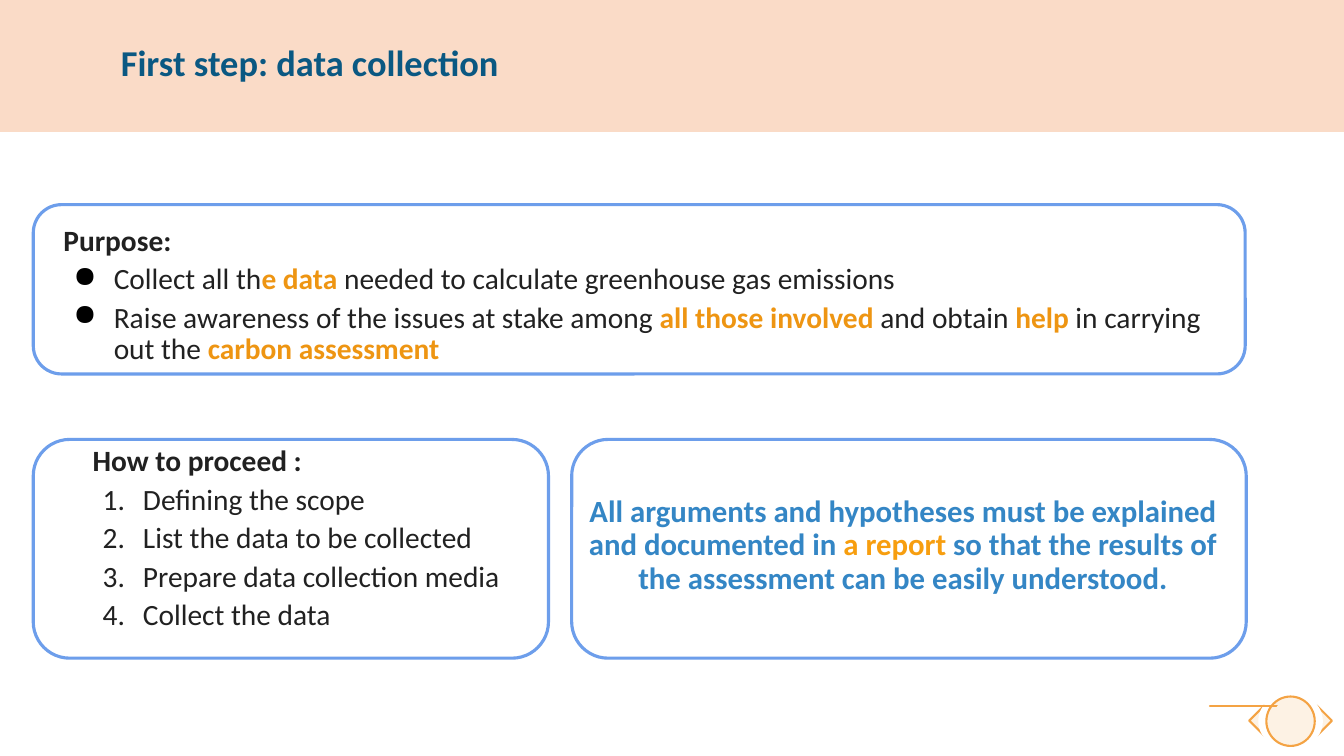
from math import cos, pi, sin

from lxml import etree
from pptx import Presentation
from pptx.dml.color import RGBColor
from pptx.enum.shapes import MSO_SHAPE
from pptx.enum.text import MSO_ANCHOR, PP_ALIGN
from pptx.oxml.ns import qn
from pptx.util import Inches, Pt

RECTANGLE = MSO_SHAPE.RECTANGLE
ROUNDED = MSO_SHAPE.ROUNDED_RECTANGLE
OVAL = MSO_SHAPE.OVAL
ARROW = MSO_SHAPE.STRIPED_RIGHT_ARROW
LEFT, CENTER = PP_ALIGN.LEFT, PP_ALIGN.CENTER
TOP, MIDDLE = MSO_ANCHOR.TOP, MSO_ANCHOR.MIDDLE

WHITE = RGBColor(0xFF, 0xFF, 0xFF)
BLACK = RGBColor(0x00, 0x00, 0x00)
INK = RGBColor(0x21, 0x21, 0x21)
NAVY = RGBColor(0x0A, 0x58, 0x82)
BLUE = RGBColor(0x34, 0x86, 0xC5)
FRAME = RGBColor(0x6D, 0x9E, 0xEB)
BANNER = RGBColor(0xED, 0x7D, 0x31)
ORANGE = RGBColor(0xF4, 0xA3, 0x44)
ACCENT = RGBColor(0xEE, 0x95, 0x12)
REPORT = RGBColor(0xF7, 0x9E, 0x0F)

HEADING = {"size": Pt(21), "name": "Calibri", "bold": True, "color": INK}
BODY = {**HEADING, "bold": False}
KEY = {**HEADING, "color": ACCENT}
TITLE = {**HEADING, "size": Pt(26), "color": NAVY}
CLAIM = {**HEADING, "size": Pt(22), "color": BLUE}
CLAIM_KEY = {**CLAIM, "color": REPORT}

DOT = ("buChar", {"char": "●"}, BLACK)
NUMBER = ("buAutoNum", {"type": "arabicPeriod"}, INK)


def set_style(shape, fill=None, opacity=100, line=None, width=1.5):
    """Set the fill, its opacity and the outline of a shape."""
    shape.shadow.inherit = False
    if fill is None:
        shape.fill.background()
    else:
        shape.fill.solid()
        shape.fill.fore_color.rgb = fill
        if opacity < 100:
            color = shape.fill._xPr.find(qn("a:solidFill"))[0]
            etree.SubElement(color, qn("a:alpha"), val=str(opacity * 1000))
    if line is None:
        shape.line.fill.background()
    else:
        shape.line.color.rgb = line
        shape.line.width = Pt(width)


def add_preset(page, kind, box, **style):
    """Add a preset shape in a box given in inches."""
    shape = page.shapes.add_shape(kind, *map(Inches, box))
    set_style(shape, **style)
    return shape


def add_bullet(para, bullet):
    """Give a paragraph a hanging bullet or number."""
    tag, attributes, color = bullet
    properties = para._p.get_or_add_pPr()
    properties.set("marL", str(Inches(0.5)))
    properties.set("indent", str(Inches(-0.4)))
    tint = etree.SubElement(properties, qn("a:buClr"))
    etree.SubElement(tint, qn("a:srgbClr"), val=str(color))
    etree.SubElement(properties, qn("a:" + tag), **attributes)


def add_text(page, box, paragraphs, align=LEFT, anchor=TOP, inset=0.1):
    """Write paragraphs, each a bullet and its formatted spans."""
    frame = page.shapes.add_textbox(*map(Inches, box)).text_frame
    settings = {"word_wrap": True, "vertical_anchor": anchor,
                "margin_left": Inches(0.1), "margin_right": Inches(0.1),
                "margin_top": Inches(inset), "margin_bottom": Inches(inset)}
    for name, value in settings.items():
        setattr(frame, name, value)
    for index, (bullet, spans) in enumerate(paragraphs):
        para = frame.add_paragraph() if index else frame.paragraphs[0]
        if bullet:
            add_bullet(para, bullet)
        para.alignment = align
        para.line_spacing = 0.9
        if index:
            para.space_before = Pt(4.8)
        for text, formats in spans:
            span = para.add_run()
            span.text = text
            for name, value in formats.items():
                if name == "color":
                    span.font.color.rgb = value
                else:
                    setattr(span.font, name, value)


def add_banner(page, box):
    """Add the tinted title band."""
    left, top, width, height = box
    add_preset(page, RECTANGLE, box, fill=BANNER, opacity=27)
    add_text(page, (left + 1.1, top + 0.11, width - 3.32, height - 0.24),
             [(None, [("First step: data collection", TITLE)])],
             anchor=MIDDLE, inset=0.05)


def add_frame(page, box):
    """Add a rounded outline."""
    add_preset(page, ROUNDED, box, line=FRAME, width=2.25)


def add_purpose(page, box):
    """Add the framed purpose of the step."""
    left, top, width, height = box
    add_frame(page, box)
    add_text(page, (left + 0.2, top + 0.11, width - 0.13, height - 0.07), [
        (None, [("Purpose:", HEADING)]),
        (DOT, [("Collect all th", BODY), ("e data", KEY),
               (" needed to calculate greenhouse gas emissions", BODY)]),
        (DOT, [("Raise awareness of the issues at stake among", BODY),
               (" all those involved", KEY), (" and obtain", BODY),
               (" help", KEY), (" in carrying out the ", BODY),
               ("carbon assessment", KEY)]),
    ])


def add_procedure(page, box):
    """Add the framed, numbered procedure."""
    left, top, width, height = box
    steps = ["Defining the scope", "List the data to be collected",
             "Prepare data collection media", "Collect the data"]
    add_frame(page, box)
    add_text(page, (left + 0.49, top - 0.03, width - 0.51, height - 0.11),
             [(None, [("How to proceed :", HEADING)])]
             + [(NUMBER, [(step, BODY)]) for step in steps])


def add_claim(page, box):
    """Add the framed demand for a report."""
    left, top, width, height = box
    add_frame(page, box)
    add_text(page, (left, top + 0.46, width - 0.12, height - 0.46), [(None, [
        ("All arguments and hypotheses must be explained and documented in ",
         CLAIM),
        ("a report", CLAIM_KEY),
        (" so that the results of the assessment can be easily understood.",
         CLAIM)])], align=CENTER)


def add_navigator(page, box):
    """Add the page disc between two arrowheads."""
    left, top, width, height = box
    middle = left + width / 2
    disc_width = 0.48
    for side in (-1, 1):
        arrow_box = (middle + side * 0.25 - 0.16, top + 0.09, 0.32, 0.3)
        arrow = add_preset(page, ARROW, arrow_box, fill=ORANGE, opacity=14,
                           line=ORANGE)
        if side < 0:
            arrow._element.spPr.get_or_add_xfrm().set("flipH", "1")
        disc_left = middle + side * 0.07 - disc_width / 2
        add_preset(page, OVAL, (disc_left, top, disc_width, height),
                   fill=WHITE, line=WHITE)
        angles = [pi / 5 * (step / 6 - 1) for step in range(13)]
        points = [(middle + side * (0.08 + 0.24 * cos(angle)),
                   top + height / 2 + 0.24 * sin(angle)) for angle in angles]
        builder = page.shapes.build_freeform(*points[0], scale=Inches(1))
        builder.add_line_segments(points[1:], close=False)
        set_style(builder.convert_to_shape(), line=ORANGE)
    add_preset(page, OVAL, (middle - disc_width / 2, top, disc_width, height),
               fill=ORANGE, opacity=14, line=ORANGE)


def main():
    """Build and save the slide."""
    deck = Presentation()
    deck.slide_width, deck.slide_height = Inches(13.33), Inches(7.5)
    page = deck.slides.add_slide(deck.slide_layouts[6])
    add_navigator(page, (12.39, 6.91, 0.82, 0.49))
    add_banner(page, (0, 0, 13.33, 1.31))
    add_claim(page, (5.67, 4.36, 6.69, 2.17))
    add_procedure(page, (0.33, 4.36, 5.11, 2.17))
    add_purpose(page, (0.33, 2.03, 12.02, 1.68))
    deck.save("out.pptx")


if __name__ == "__main__":
    main()
